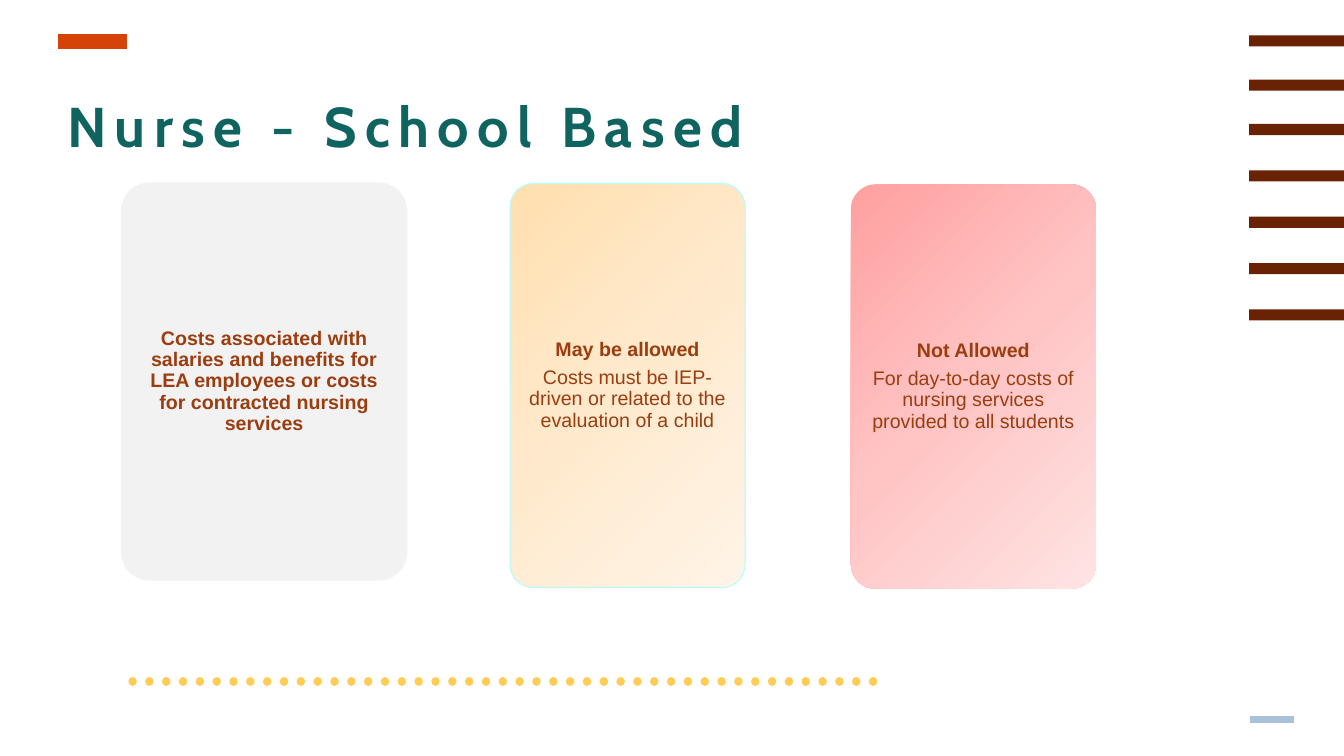
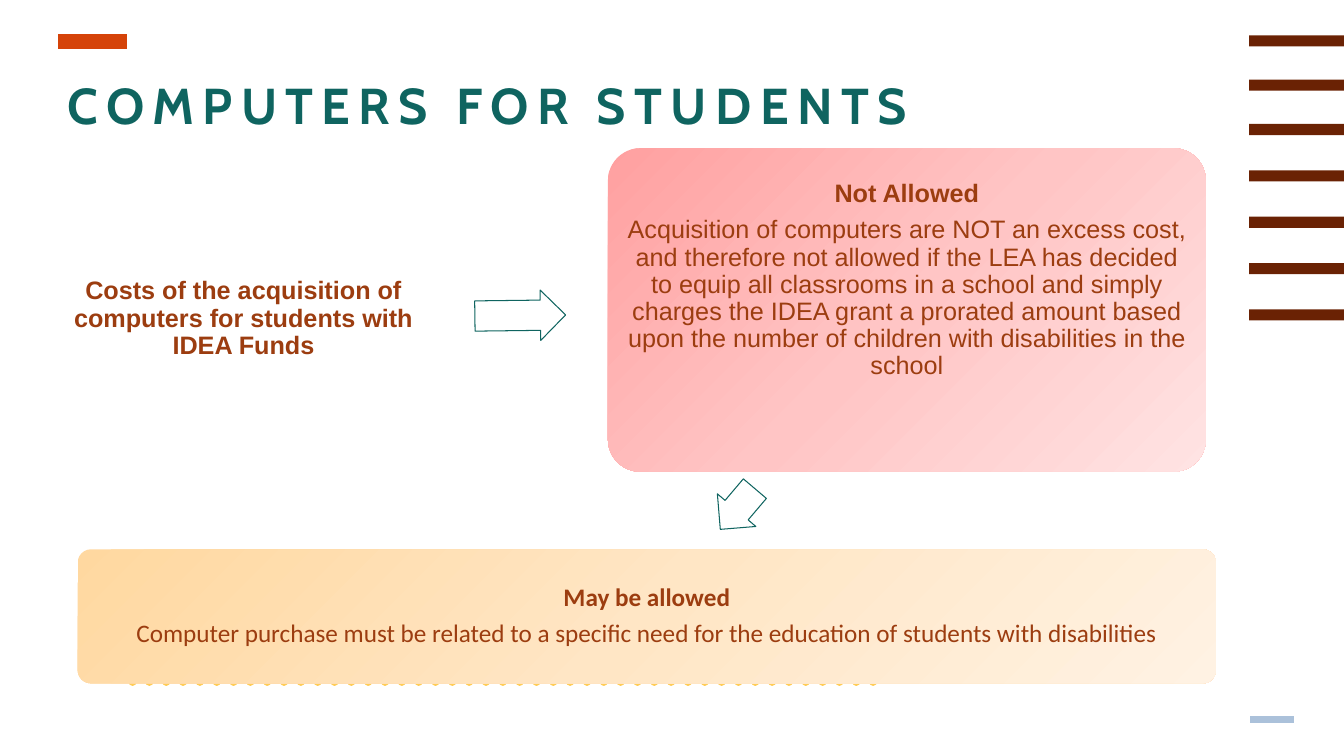
from copy import deepcopy

from pptx import Presentation
from pptx.dml.color import RGBColor
from pptx.enum.dml import MSO_LINE
from pptx.enum.shapes import MSO_CONNECTOR, MSO_SHAPE
from pptx.enum.text import MSO_ANCHOR, MSO_AUTO_SIZE, PP_ALIGN
from pptx.oxml.ns import qn
from pptx.oxml.xmlchemy import OxmlElement
from pptx.util import Pt

RECT = MSO_SHAPE.RECTANGLE
ROUND = MSO_SHAPE.ROUNDED_RECTANGLE
ARROW = MSO_SHAPE.RIGHT_ARROW
LINE = MSO_CONNECTOR.STRAIGHT
DOTS = MSO_LINE.ROUND_DOT
LEFT, CENTER = PP_ALIGN.LEFT, PP_ALIGN.CENTER
TOP, MIDDLE = MSO_ANCHOR.TOP, MSO_ANCHOR.MIDDLE
FIXED = MSO_AUTO_SIZE.NONE

SCALE = 9144
WIDE, HIGH = 1333, 750

COLORS = {
    "title": "0F6460", "text": "9C3D10", "bar": "6A2204", "dots": "FFCC56",
    "accent": "D54309", "foot": "ABC1DA", "white": "FFFFFF",
    "gray": "F2F2F2", "cyan": "B3FFFD",
}
FADES = {
    "red": ("FFA0A0", "FFC5C5", "FFE3E3"),
    "cream": ("FFDFAF", "FFEACE", "FFF4E7"),
    "amber": ("FFD8A0", "FFE6C5", "FFF2E3"),
}

BARS = (35, 79, 123, 169, 215, 261, 307)
RULES = [
    (866, 128, 676, "dots", 6, True),
    (58, 126, 41, "accent", 11, False),
    (1240, 1283, 714, "foot", 5, False),
]

SLIDES = [
    {
        "title": ("Nurse - School Based", (57, 79, 1220, 75), 40),
        "size": 14,
        "pad": 6,
        "cards": [
            {"box": (120, 181, 284, 395), "fill": "gray",
             "text": ["Costs associated with salaries and benefits for LEA "
                      "employees or costs for contracted nursing services"]},
            {"box": (506, 182, 233, 401), "fill": "cream", "line": "cyan",
             "text": ["May be allowed",
                      "Costs must be IEP-driven or related to the evaluation "
                      "of a child"]},
            {"box": (844, 183, 243, 401), "fill": "red",
             "text": ["Not Allowed",
                      "For day-to-day costs of nursing services provided to "
                      "all students"]},
        ],
        "arrows": [],
    },
    {
        "title": ("COMPUTERS FOR STUDENTS", (57, 63, 1220, 70), 36),
        "size": 18,
        "pad": 7,
        "cards": [
            {"box": (49, 142, 385, 349), "fill": "white",
             "text": ["Costs of the acquisition of computers for students "
                      "with IDEA Funds"]},
            {"box": (603, 147, 593, 321), "fill": "red", "base": 65,
             "text": ["Not Allowed",
                      "Acquisition of computers are NOT an excess cost, and "
                      "therefore not allowed if the LEA has decided to equip "
                      "all classrooms in a school and simply charges the IDEA "
                      "grant a prorated amount based upon the number of "
                      "children with disabilities in the school"]},
            {"box": (77, 545, 1129, 133), "fill": "amber", "font": "Calibri",
             "text": ["May be allowed",
                      "Computer purchase must be related to a specific need "
                      "for the education of students with disabilities"]},
        ],
        "arrows": [((471, 288, 90, 50), 359.3), ((705, 480, 53, 50), 130.3)],
    },
]


def px(num):
    return round(num * SCALE)


def rgb(name):
    return RGBColor.from_string(COLORS[name])


def paint(shape, name):
    fill = shape.fill
    if name not in FADES:
        fill.solid()
        fill.fore_color.rgb = rgb(name)
        return
    fill.gradient()
    fill.gradient_angle = 315
    stops = shape.element.spPr.find(".//" + qn("a:gsLst"))
    stops.insert(1, deepcopy(stops[0]))
    for i, (stop, tone) in enumerate(zip(fill.gradient_stops, FADES[name])):
        stop.position = i / 2
        stop.color.rgb = RGBColor.from_string(tone)


def add_form(slide, kind, box, fill, line=None):
    shape = slide.shapes.add_shape(kind, *map(px, box))
    shape.shadow.inherit = False
    paint(shape, fill)
    if line:
        shape.line.color.rgb = rgb(line)
        shape.line.width = Pt(0.75)
    else:
        shape.line.fill.background()
    return shape


def add_rule(slide, start, end, y, color, width, dotted):
    rule = slide.shapes.add_connector(LINE, px(start), px(y), px(end), px(y))
    rule.line.color.rgb = rgb(color)
    rule.line.width = Pt(width)
    props = rule.element.spPr
    if dotted:
        rule.line.dash_style = DOTS
        props.find(qn("a:ln")).set("cap", "rnd")
    props.append(OxmlElement("a:effectLst"))
    return rule


def add_frame(layout, slide):
    for holder in list(layout.placeholders)[1:]:
        layout.shapes.element.remove(holder.element)
    parts = [add_rule(slide, *rule) for rule in RULES]
    parts += [add_form(slide, RECT, (1239, y, 94, 11), "bar") for y in BARS]
    for part in parts:
        layout.shapes.element.append(part.element)


def set_title(slide, text, box, size):
    title = slide.shapes.title
    title.left, title.top, title.width, title.height = map(px, box)
    frame = title.text_frame
    frame.text = text
    frame.auto_size = FIXED
    frame.vertical_anchor = TOP
    frame.margin_top = px(8)
    para = frame.paragraphs[0]
    para.alignment = LEFT
    para.line_spacing = 1.05
    font = para.runs[0].font
    font.name, font.size, font.bold = "Cabin", Pt(size), True
    font.color.rgb = rgb("title")
    para.runs[0].font._element.set("spc", "600")


def add_card(slide, card, size, pad):
    shape = add_form(slide, ROUND, card["box"], card["fill"], card.get("line"))
    shape.adjustments[0] = 0.1
    frame = shape.text_frame
    frame.word_wrap = True
    frame.vertical_anchor = MIDDLE
    frame.margin_left = frame.margin_right = frame.margin_top = px(pad)
    frame.margin_bottom = px(card.get("base", pad))
    for i, text in enumerate(card["text"]):
        para = frame.add_paragraph() if i else frame.paragraphs[0]
        para.text = text
        para.alignment = CENTER
        para.line_spacing = 0.9
        para.space_after = Pt(size * 0.35)
        font = para.font
        font.name = card.get("font", "Arial")
        font.size, font.bold = Pt(size), i == 0
        font.color.rgb = rgb("text")


def add_arrow(slide, box, turn):
    arrow = add_form(slide, ARROW, box, "white", "title")
    arrow.adjustments[0] = 0.6
    arrow.adjustments[1] = 0.5
    arrow.rotation = turn


def main():
    deck = Presentation()
    deck.slide_width, deck.slide_height = px(WIDE), px(HIGH)
    layout = deck.slide_layouts.get_by_name("Title Only")
    for i, data in enumerate(SLIDES):
        slide = deck.slides.add_slide(layout)
        if i == 0:
            add_frame(layout, slide)
        set_title(slide, *data["title"])
        for card in data["cards"]:
            add_card(slide, card, data["size"], data["pad"])
        for box, turn in data["arrows"]:
            add_arrow(slide, box, turn)
    deck.save("out.pptx")


if __name__ == "__main__":
    main()
